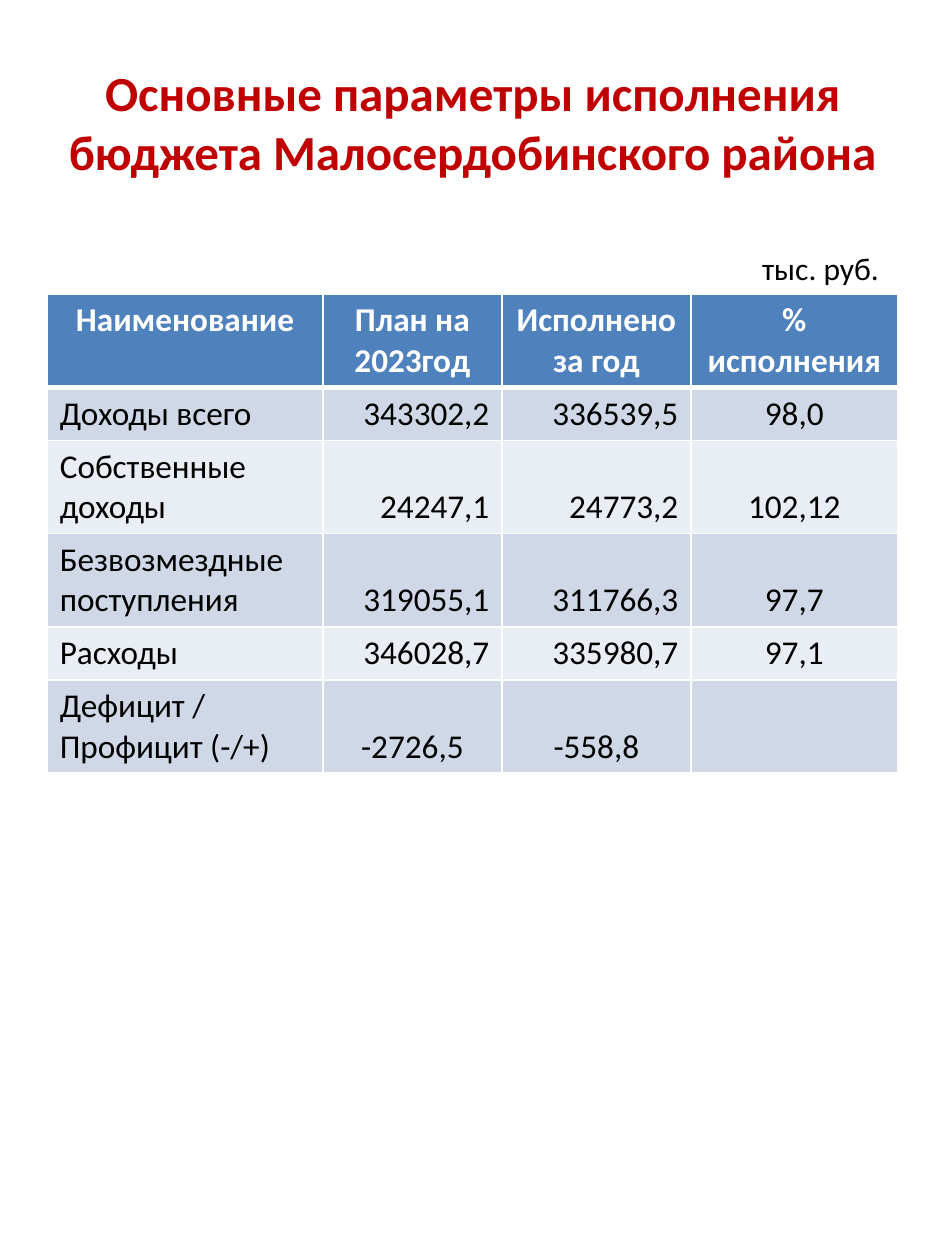
import pptx
import pptx.dml.color
import pptx.enum.text
import pptx.oxml.ns
import pptx.util
from lxml import etree

Pt = pptx.util.Pt
ALIGN = pptx.enum.text.PP_ALIGN
ANCHOR = pptx.enum.text.MSO_ANCHOR

ROWS = [
    ("Наименование", "План на 2023год", "Исполнено за год", "% исполнения"),
    ("Доходы всего", "343302,2", "336539,5", "98,0"),
    ("Собственные доходы", "24247,1", "24773,2", "102,12"),
    ("Безвозмездные поступления", "319055,1", "311766,3", "97,7"),
    ("Расходы", "346028,7", "335980,7", "97,1"),
    ("Дефицит /\nПрофицит (-/+)", "-2726,5", "-558,8", ""),
]
WIDTHS = (157.5, 102.3, 108, 118.2)
TALL, SHORT = 53, 30.3
HEIGHTS = (TALL, SHORT, TALL, TALL, SHORT, TALL)


def color(code):
    """Turn a hex string into a colour."""
    return pptx.dml.color.RGBColor.from_string(code)


class Page:
    """Hold the style and the current slide."""

    font = "Calibri"
    red, black, white = "C00000", "000000", "FFFFFF"
    head, bands = "4F81BD", ("E9EDF4", "D0D8E8")

    def __init__(self, deck):
        """Add a title-only slide to the deck."""
        self.slide = deck.slides.add_slide(deck.slide_layouts[5])

    def text(self, frame, words, size, ink, bold=False, align=ALIGN.LEFT):
        """Fill a text frame and format its paragraphs."""
        frame.text = words
        style = {"name": self.font, "size": Pt(size), "bold": bold}
        for para in frame.paragraphs:
            para.alignment = align
            for item in [para.font] + [run.font for run in para.runs]:
                for key, value in style.items():
                    setattr(item, key, value)
                item.color.rgb = color(ink)

    def title(self, words, box):
        """Move and format the title placeholder."""
        shape = self.slide.shapes.title
        for key, value in zip(("left", "top", "width", "height"), box):
            setattr(shape, key, Pt(value))
        shape.text_frame.vertical_anchor = ANCHOR.MIDDLE
        self.text(shape.text_frame, words, 28, self.red, True, ALIGN.CENTER)

    def label(self, words, box):
        """Add a plain text box."""
        shape = self.slide.shapes.add_textbox(*map(Pt, box))
        shape.text_frame.word_wrap = True
        self.text(shape.text_frame, words, 18, self.black)

    def edge(self, cell, side, width):
        """Draw one white border of a cell."""
        name = pptx.oxml.ns.qn
        props = cell._tc.get_or_add_tcPr()
        line = etree.SubElement(props, name("a:ln" + side), w=str(Pt(width)))
        fill = etree.SubElement(line, name("a:solidFill"))
        etree.SubElement(fill, name("a:srgbClr"), val=self.white)

    def cell(self, cell, words, row, col):
        """Format one table cell by its place in the grid."""
        top = row == 0
        for side in "LRTB":
            thick = (top and side == "B") or (row == 1 and side == "T")
            self.edge(cell, side, 3 if thick else 1)
        cell.fill.solid()
        cell.fill.fore_color.rgb = color(self.head if top else self.bands[row % 2])
        cell.vertical_anchor = ANCHOR.TOP if top or col == 0 else ANCHOR.BOTTOM
        if top or (col and (col == 3 or row == len(ROWS) - 1)):
            align = ALIGN.CENTER
        else:
            align = ALIGN.RIGHT if col else ALIGN.LEFT
        ink = self.white if top else self.black
        self.text(cell.text_frame, words, 19, ink, top, align)

    def table(self, rows, left, top):
        """Add the budget table."""
        box = map(Pt, (left, top, sum(WIDTHS), sum(HEIGHTS)))
        grid = self.slide.shapes.add_table(len(rows), len(WIDTHS), *box).table
        for col, width in zip(grid.columns, WIDTHS):
            col.width = Pt(width)
        for row, height in zip(grid.rows, HEIGHTS):
            row.height = Pt(height)
        for i, row in enumerate(rows):
            for j, words in enumerate(row):
                self.cell(grid.cell(i, j), words, i, j)


def main():
    """Build and save the slide."""
    deck = pptx.Presentation()
    deck.slide_width, deck.slide_height = Pt(540), Pt(720)
    page = Page(deck)
    page.title("Основные параметры исполнения бюджета Малосердобинского района",
               (27, 28.8, 486, 81.4))
    page.table(ROWS, 27, 168)
    page.label("тыс. руб.", (428.4, 139, 90.7, 29))
    deck.save("out.pptx")


if __name__ == "__main__":
    main()
